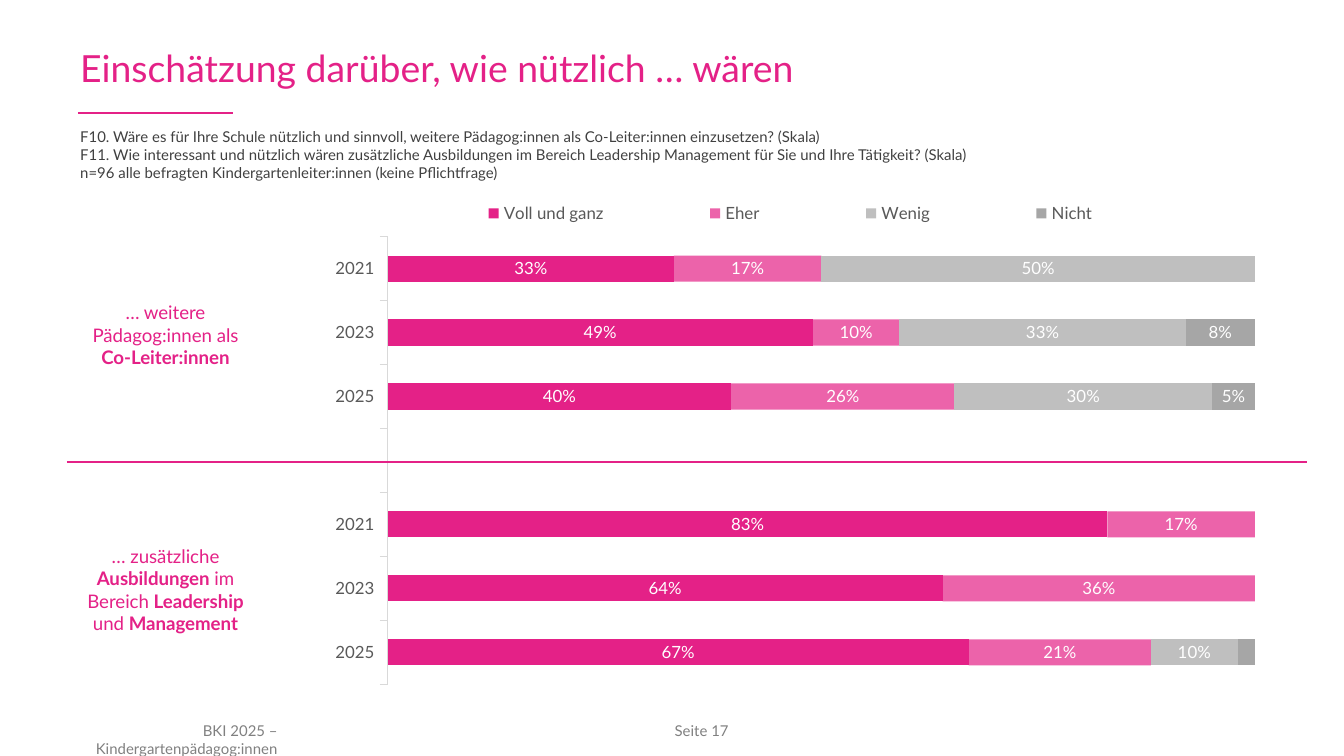
from lxml import etree
from pptx import Presentation
from pptx import util as u
from pptx.chart.data import CategoryChartData
from pptx.dml.color import RGBColor
from pptx.enum import chart as ch, shapes, text
from pptx.oxml import parse_xml
from pptx.oxml.ns import nsdecls, qn

PINK, GREY, DARK, AXIS = "E42187", "808080", "404040", "595959"
FONT = "Lato"
LEFT, MID, RIGHT = text.PP_ALIGN.LEFT, text.PP_ALIGN.CENTER, text.PP_ALIGN.RIGHT

YEARS = ["2021", "2023", "2025"]
CATS = YEARS + [""] + YEARS
SERIES = [
    ("Voll und ganz", PINK, 100, [0.33, 0.49, 0.4, None, 0.83, 0.64, 0.67]),
    ("Eher", PINK, 70, [0.17, 0.1, 0.26, None, 0.17, 0.36, 0.21]),
    ("Wenig", "BFBFBF", 100, [0.5, 0.33, 0.3, None, 0, 0, 0.1]),
    ("Nicht", "A6A6A6", 100, [0, 0.08, 0.05, None, None, 0, 0.02]),
]
MIN_LABEL = 0.05


def px(n):
    return u.Emu(round(n * 9144000 / 1344))


def rgb(code):
    return RGBColor.from_string(code)


def style(obj, **vals):
    for name, val in vals.items():
        setattr(obj, name, val)


def paint(font, size, color, bold=False):
    style(font, name=FONT, size=u.Pt(size), bold=bold)
    font.color.rgb = rgb(color)


def write(slide, box, lines, size, color, align=LEFT, mid=False):
    """Each line is a list of runs; a run in a tuple is bold."""
    frame = slide.shapes.add_textbox(*map(px, box)).text_frame
    anchor = text.MSO_ANCHOR.MIDDLE if mid else text.MSO_ANCHOR.TOP
    style(frame, word_wrap=True, vertical_anchor=anchor)
    for i, line in enumerate(lines):
        para = frame.add_paragraph() if i else frame.paragraphs[0]
        para.alignment = align
        for part in line:
            bold = isinstance(part, tuple)
            run = para.add_run()
            run.text = part[0] if bold else part
            paint(run.font, size, color, bold)


def rule(slide, x, y, wide, weight):
    line = slide.shapes.add_connector(
        shapes.MSO_CONNECTOR.STRAIGHT, px(x), px(y), px(x + wide), px(y))
    line.line.color.rgb = rgb(PINK)
    line.line.width = u.Pt(weight)
    etree.SubElement(line._element.spPr, qn("a:effectLst"))


def layout(node, x, y, w, h, inner=False):
    """Set the manual layout of a plot area or legend, as shares of the chart."""
    for old in node.findall(qn("c:layout")):
        node.remove(old)
    parts = [("layoutTarget", "inner")] if inner else []
    parts += [("xMode", "edge"), ("yMode", "edge"),
              ("x", x), ("y", y), ("w", w), ("h", h)]
    body = "".join(f'<c:{tag} val="{val}"/>' for tag, val in parts)
    new = parse_xml(f'<c:layout {nsdecls("c")}><c:manualLayout>{body}'
                    '</c:manualLayout></c:layout>')
    pos = node.find(qn("c:legendPos"))
    if pos is None:
        node.insert(0, new)
    else:
        pos.addnext(new)


def label(series, vals):
    """Show values in white, leaving out those too small to fit."""
    labels = series.data_labels
    style(labels, show_value=True, number_format="0%",
          number_format_is_linked=False)
    paint(labels.font, 9, "FFFFFF")
    small = [i for i, v in enumerate(vals) if v is not None and v < MIN_LABEL]
    for place, i in enumerate(small):
        labels._element.insert(place, parse_xml(
            f'<c:dLbl {nsdecls("c")}><c:idx val="{i}"/>'
            '<c:delete val="1"/></c:dLbl>'))


def bars(slide, box):
    data = CategoryChartData(number_format="0%")
    data.categories = CATS
    for name, _, _, vals in SERIES:
        data.add_series(name, vals)
    chart = slide.shapes.add_chart(
        ch.XL_CHART_TYPE.BAR_STACKED_100, *map(px, box), data).chart
    style(chart, has_title=False, has_legend=True)
    paint(chart.font, 9, AXIS)

    plot = chart.plots[0]
    style(plot, gap_width=145, overlap=100, vary_by_categories=False)
    for series, (_, color, alpha, vals) in zip(plot.series, SERIES):
        fill = series.format.fill
        fill.solid()
        fill.fore_color.rgb = rgb(color)
        if alpha < 100:
            tone = series._element.spPr.find(".//" + qn("a:srgbClr"))
            etree.SubElement(tone, qn("a:alpha"), val=str(alpha * 1000))
        label(series, vals)

    cat = chart.category_axis
    style(cat, reverse_order=True, has_major_gridlines=False,
          major_tick_mark=ch.XL_TICK_MARK.OUTSIDE)
    paint(cat.tick_labels.font, 9, AXIS)
    cat.format.line.color.rgb = rgb("D9D9D9")
    cat.format.line.width = u.Pt(0.75)
    style(chart.value_axis, visible=False, has_major_gridlines=False,
          minimum_scale=0, maximum_scale=1)

    legend = chart.legend
    style(legend, position=ch.XL_LEGEND_POSITION.TOP, include_in_layout=False)
    paint(legend.font, 9, AXIS)
    layout(legend._element, 0.3, 0.04, 0.65, 0.06)
    area = chart._chartSpace.find(".//" + qn("c:plotArea"))
    layout(area, 0.3, 0.115, 0.7, 0.863, inner=True)


def head(slide, x, y):
    write(slide, (x, y, 1039, 73),
          [["Einschätzung darüber, wie nützlich … wären"]], 20, PINK, mid=True)
    rule(slide, x + 11, y + 82, 155, 1.5)
    write(slide, (x, y + 90, 1122, 67), [
        ["F10. Wäre es für Ihre Schule nützlich und sinnvoll, weitere "
         "Pädagog:innen als Co-Leiter:innen einzusetzen? (Skala)"],
        ["F11. Wie interessant und nützlich wären zusätzliche Ausbildungen im "
         "Bereich Leadership Management für Sie und Ihre Tätigkeit? (Skala)"],
        ["n=96 alle befragten Kindergartenleiter:innen (keine Pflichtfrage)"],
    ], 8, DARK)


def topics(slide, x, y):
    write(slide, (x, y, 187, 82),
          [["… weitere Pädagog:innen als ", ("Co-Leiter:innen",)]],
          10, PINK, MID, True)
    write(slide, (x, y + 244, 187, 103),
          [["… zusätzliche ", ("Ausbildungen",), " im Bereich ",
            ("Leadership",), " und ", ("Management",)]],
          10, PINK, MID, True)


def foot(slide, y):
    write(slide, (32, y, 259, 32),
          [["BKI 2025 – Kindergartenpädagog:innen"]], 8, GREY, RIGHT)
    write(slide, (642, y, 100, 32), [["Seite 17"]], 8, GREY, RIGHT)


def main():
    prs = Presentation()
    style(prs, slide_width=px(1344), slide_height=px(756))
    slide = prs.slides.add_slide(prs.slide_layouts[6])
    foot(slide, 715)
    head(slide, 67, 31)
    bars(slide, (16, 177, 1239, 519))
    topics(slide, 72, 294)
    rule(slide, 67, 462, 1240, 0.75)
    prs.save("out.pptx")


if __name__ == "__main__":
    main()
